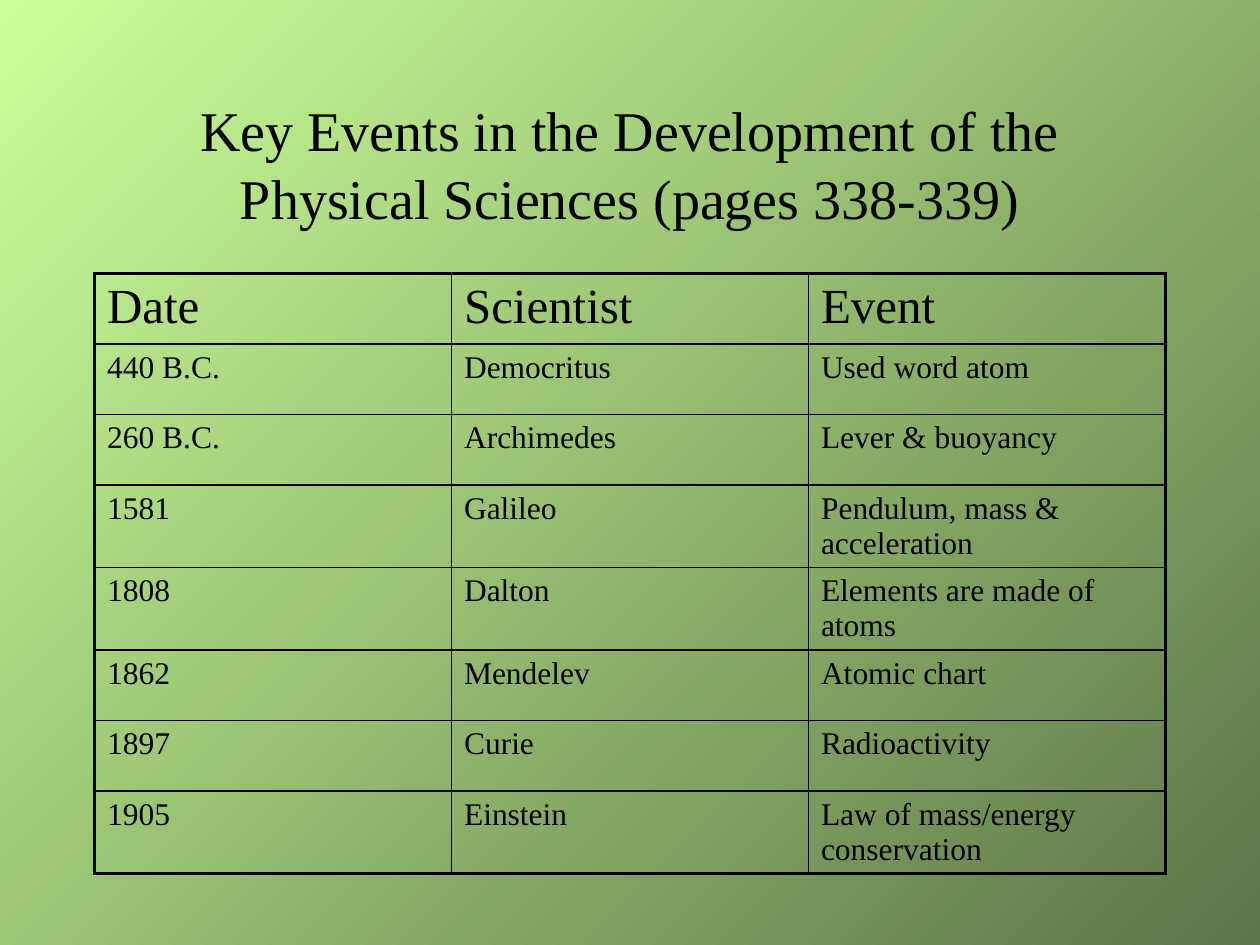
"""Build a slide with a table of key events in the physical sciences."""
from dataclasses import dataclass

from lxml import etree
from pptx import Presentation
from pptx.dml.color import RGBColor
from pptx.enum import text
from pptx.oxml import ns
from pptx.util import Inches, Pt


@dataclass(frozen=True)
class Theme:
    font: str = "Times New Roman"
    ink: str = "000000"
    light: str = "CCFF99"
    dark: str = "5E7647"
    title: float = 32
    header: float = 28
    body: float = 18
    outer: float = 2.25
    inner: float = 1


THEME = Theme()
TITLE = "Key Events in the Development of the Physical Sciences (pages 338-339)"
EVENTS = [
    ("Date", "Scientist", "Event"),
    ("440 B.C.", "Democritus", "Used word atom"),
    ("260 B.C.", "Archimedes", "Lever & buoyancy"),
    ("1581", "Galileo", "Pendulum, mass & acceleration"),
    ("1808", "Dalton", "Elements are made of atoms"),
    ("1862", "Mendelev", "Atomic chart"),
    ("1897", "Curie", "Radioactivity"),
    ("1905", "Einstein", "Law of mass/energy conservation"),
]


def write(frame, words, size, align=text.PP_ALIGN.LEFT, before=0):
    paragraph = frame.paragraphs[0]
    paragraph.alignment = align
    if before:
        spacing = etree.SubElement(paragraph._p.get_or_add_pPr(), ns.qn("a:spcBef"))
        etree.SubElement(spacing, ns.qn("a:spcPct"), val=str(before * 1000))
    run = paragraph.add_run()
    run.text = words
    run.font.name = THEME.font
    run.font.size = Pt(size)
    run.font.color.rgb = RGBColor.from_string(THEME.ink)


def paint_background(slide):
    fill = slide.background.fill
    fill.gradient()
    fill.gradient_angle = 315
    for stop, color in zip(fill.gradient_stops, (THEME.light, THEME.dark)):
        stop.color.rgb = RGBColor.from_string(color)


def add_title(slide):
    title = slide.shapes.title
    title.left, title.top = Inches(0.75), Inches(0.67)
    title.width, title.height = Inches(8.5), Inches(1.25)
    title.text_frame.vertical_anchor = text.MSO_ANCHOR.MIDDLE
    write(title.text_frame, TITLE, THEME.title, align=text.PP_ALIGN.CENTER)


def set_borders(cell, outer_sides):
    properties = cell._tc.get_or_add_tcPr()
    for side in "LRTB":
        width = THEME.outer if side in outer_sides else THEME.inner
        line = etree.SubElement(properties, ns.qn(f"a:ln{side}"), w=str(Pt(width)))
        fill = etree.SubElement(line, ns.qn("a:solidFill"))
        etree.SubElement(fill, ns.qn("a:srgbClr"), val=THEME.ink)


def add_events(slide):
    rows, columns = len(EVENTS), len(EVENTS[0])
    events = slide.shapes.add_table(
        rows, columns, Inches(0.75), Inches(2.17), Inches(8.5), Inches(0.56 * rows)
    ).table
    events.first_row = events.horz_banding = False
    for r, record in enumerate(EVENTS):
        for c, words in enumerate(record):
            cell = events.cell(r, c)
            edges = {"L": c == 0, "R": c == columns - 1, "T": r == 0, "B": r == rows - 1}
            set_borders(cell, [side for side, outer in edges.items() if outer])
            cell.fill.background()
            size = THEME.body if r else THEME.header
            write(cell.text_frame, words, size, before=20)


def main():
    deck = Presentation()
    deck.slide_width, deck.slide_height = Inches(10), Inches(7.5)
    slide = deck.slides.add_slide(deck.slide_layouts[5])
    paint_background(slide)
    add_title(slide)
    add_events(slide)
    deck.save("out.pptx")


if __name__ == "__main__":
    main()
